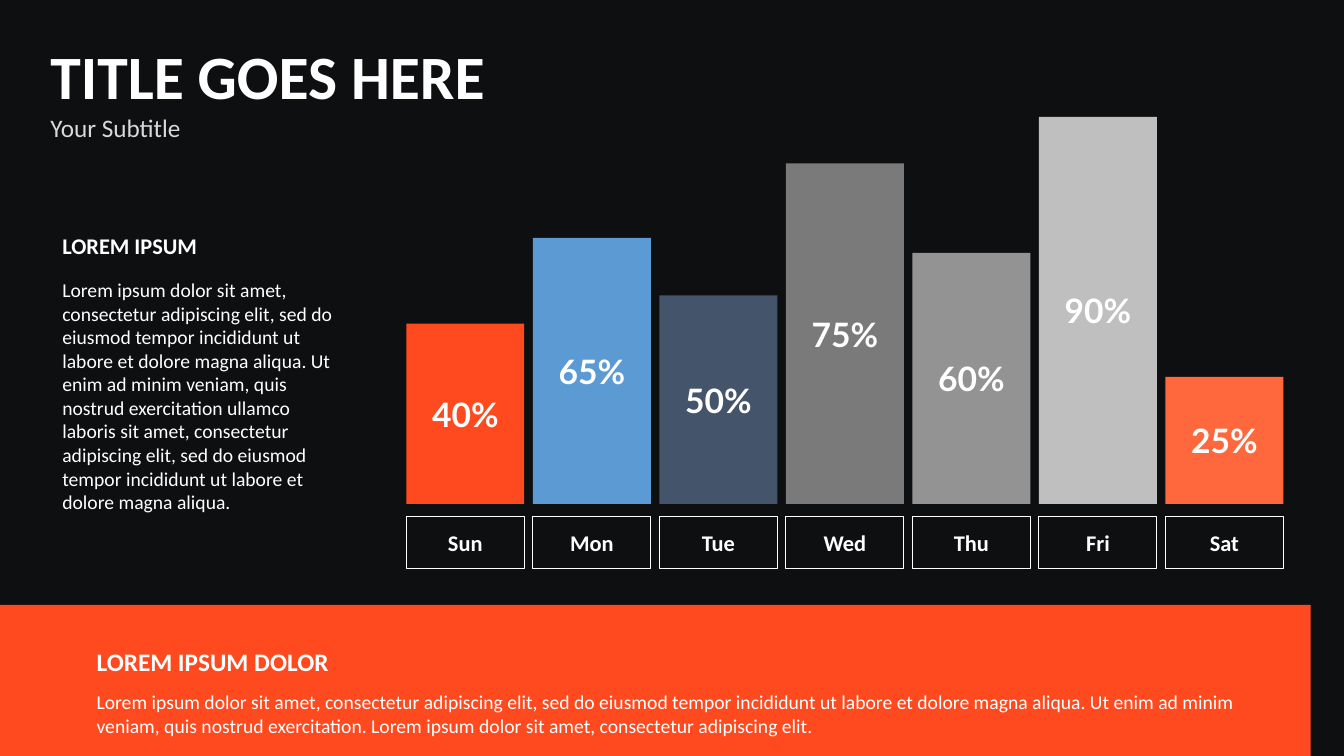
from dataclasses import dataclass

from pptx import Presentation
from pptx import util as u
from pptx.dml import color
from pptx.enum import shapes, text


@dataclass(frozen=True)
class Theme:
    """Colours, fonts and type sizes of the slide."""
    night: str = "0E0F11"
    white: str = "FFFFFF"
    mist: str = "D9D9D9"
    flame: str = "FE4A1E"
    coral: str = "FF683C"
    sky: str = "5C9AD3"
    slate: str = "44546B"
    iron: str = "7A7A7A"
    steel: str = "939393"
    silver: str = "BFBFBF"
    copy_font: str = "Calibri"
    figure_font: str = "Lato"
    title: int = 44
    subtitle: int = 18
    figure: int = 24
    day: int = 16
    body: int = 14


THEME = Theme()
WIDTH, HEIGHT = 13.33, 7.5
WEEK = [
    ("Sun", "40%", 1.79, THEME.flame),
    ("Mon", "65%", 2.64, THEME.sky),
    ("Tue", "50%", 2.07, THEME.slate),
    ("Wed", "75%", 3.38, THEME.iron),
    ("Thu", "60%", 2.49, THEME.steel),
    ("Fri", "90%", 3.84, THEME.silver),
    ("Sat", "25%", 1.26, THEME.coral),
]
SIDE_COPY = (
    "Lorem ipsum dolor sit amet, consectetur adipiscing elit, sed do eiusmod tempor "
    "incididunt ut labore et dolore magna aliqua. Ut enim ad minim veniam, quis nostrud "
    "exercitation ullamco laboris sit amet, consectetur adipiscing elit, sed do eiusmod "
    "tempor incididunt ut labore et dolore magna aliqua."
)
BAND_COPY = (
    "Lorem ipsum dolor sit amet, consectetur adipiscing elit, sed do eiusmod tempor "
    "incididunt ut labore et dolore magna aliqua. Ut enim ad minim veniam, quis nostrud "
    "exercitation. Lorem ipsum dolor sit amet, consectetur adipiscing elit."
)


def inches(box):
    """Turn a box in inches into lengths."""
    return [u.Inches(side) for side in box]


def write(paragraph, words, size, bold=False, ink=THEME.white, font=THEME.copy_font,
          align=text.PP_ALIGN.LEFT, before=0):
    """Fill one paragraph and format it."""
    run = paragraph.add_run()
    run.text = words
    run.font.color.rgb = color.RGBColor.from_string(ink)
    formats = {
        run.font: {"name": font, "size": u.Pt(size), "bold": bold},
        paragraph: {"alignment": align, "line_spacing": 1.0, "space_before": u.Pt(before)},
    }
    for target, values in formats.items():
        for key, value in values.items():
            setattr(target, key, value)


def paint(shape, fill, outline=None):
    """Give a shape a flat fill and an optional thin outline."""
    shape.shadow.inherit = False
    shape.fill.solid()
    shape.fill.fore_color.rgb = color.RGBColor.from_string(fill)
    if outline:
        shape.line.color.rgb = color.RGBColor.from_string(outline)
        shape.line.width = u.Pt(0.75)
    else:
        shape.line.fill.background()


def add_block(slide, box, fill, words, size, font, outline=None):
    """Place a rectangle with a centred bold label."""
    block = slide.shapes.add_shape(shapes.MSO_SHAPE.RECTANGLE, *inches(box))
    paint(block, fill, outline)
    block.text_frame.vertical_anchor = text.MSO_ANCHOR.MIDDLE
    write(block.text_frame.paragraphs[0], words, size, True, font=font,
          align=text.PP_ALIGN.CENTER)


def add_heading(slide, box):
    """Place the title and its subtitle in the title placeholder."""
    heading = slide.shapes.title
    heading.left, heading.top, heading.width, heading.height = inches(box)
    frame = heading.text_frame
    frame.auto_size = text.MSO_AUTO_SIZE.NONE
    frame.vertical_anchor = text.MSO_ANCHOR.TOP
    write(frame.paragraphs[0], "TITLE GOES HERE", THEME.title, True)
    write(frame.add_paragraph(), "Your Subtitle", THEME.subtitle, ink=THEME.mist)


def add_passage(slide, box, headline, headline_size, copy, gap):
    """Place a bold headline above a body paragraph."""
    frame = slide.shapes.add_textbox(*inches(box)).text_frame
    frame.word_wrap = True
    write(frame.paragraphs[0], headline, headline_size, True)
    write(frame.add_paragraph(), copy, THEME.body, before=gap)


def add_week(slide, box):
    """Place the daily bars on a common base with day labels beneath."""
    left, top, width, height = box
    bar_width, day_height, day_gap = 1.17, 0.52, 0.12
    pitch = (width - bar_width) / (len(WEEK) - 1)
    day_top = top + height - day_height
    base = day_top - day_gap
    for index, (day, share, bar_height, fill) in enumerate(WEEK):
        bar_left = left + index * pitch
        add_block(slide, (bar_left, day_top, bar_width, day_height), THEME.night, day,
                  THEME.day, THEME.copy_font, THEME.white)
        add_block(slide, (bar_left, base - bar_height, bar_width, bar_height), fill, share,
                  THEME.figure, THEME.figure_font)


def add_band(slide, box):
    """Place the notched band and its passage."""
    left, top, width, height = box
    right, bottom = left + width, top + height
    notch_left, notch_half, notch_depth = left + 1.16, 0.3, 0.4
    outline = slide.shapes.build_freeform(left, top, scale=u.Inches(1))
    outline.add_line_segments([
        (notch_left, top),
        (notch_left + notch_half, top + notch_depth),
        (notch_left + 2 * notch_half, top),
        (right, top),
        (right, bottom),
        (left, bottom),
    ])
    paint(outline.convert_to_shape(), THEME.flame)
    add_passage(slide, (left + 0.86, top + 0.48, width - 1.26, 1.01),
                "LOREM IPSUM DOLOR", THEME.subtitle, BAND_COPY, 10)


def main():
    """Build and save the slide."""
    deck = Presentation()
    deck.slide_width, deck.slide_height = inches((WIDTH, HEIGHT))
    slide = deck.slides.add_slide(deck.slide_layouts.get_by_name("Title Only"))
    slide.background.fill.solid()
    slide.background.fill.fore_color.rgb = color.RGBColor.from_string(THEME.night)
    add_heading(slide, (0.4, 0.33, 6.5, 1.14))
    add_week(slide, (4.03, 1.16, 8.7, 4.48))
    add_passage(slide, (0.52, 2.25, 3, 2.94), "LOREM IPSUM", THEME.day, SIDE_COPY, 14)
    add_band(slide, (0, 5.88, WIDTH, HEIGHT - 5.88))
    deck.save("out.pptx")


if __name__ == "__main__":
    main()
